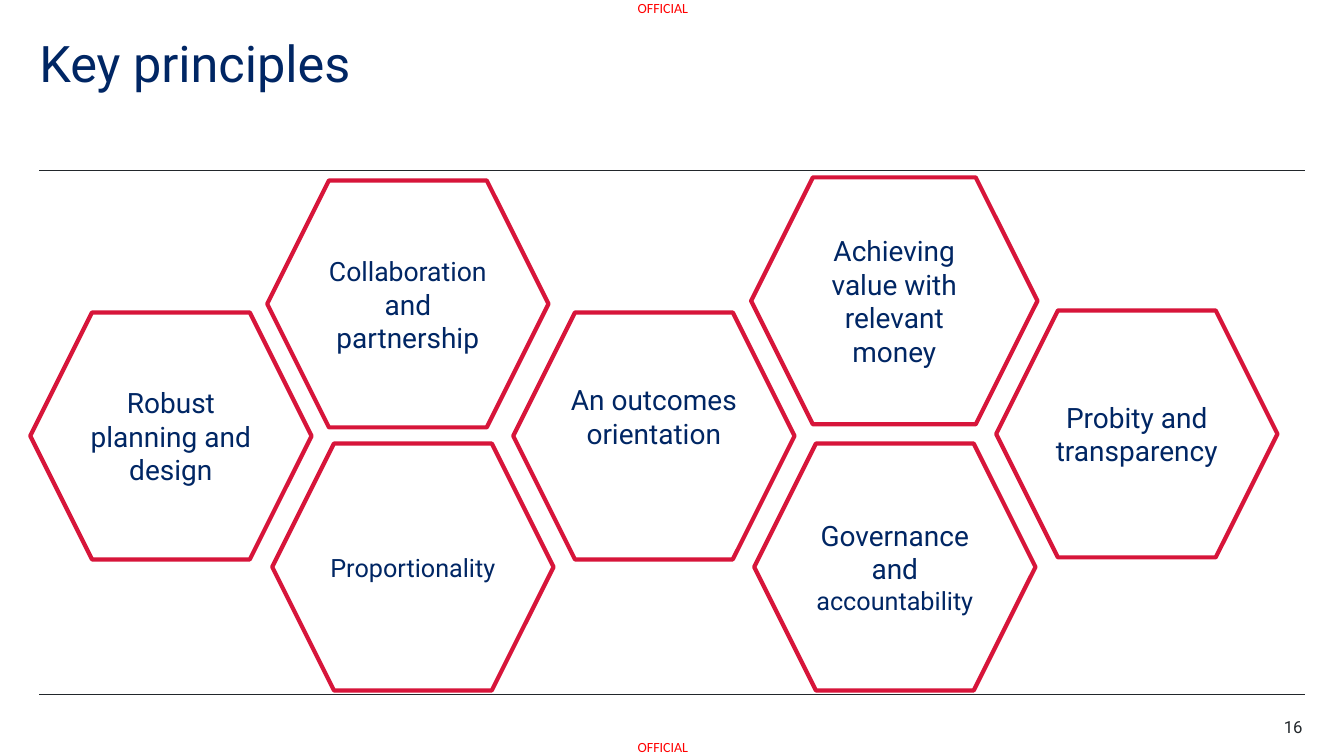
import dataclasses

import pptx
import pptx.dml.color
import pptx.enum.shapes
import pptx.enum.text
import pptx.oxml.ns
import pptx.util
from lxml import etree

EMU_PER_PX = 9144  # 100 px to the inch
ALIGN = pptx.enum.text.PP_ALIGN
ANCHOR = pptx.enum.text.MSO_ANCHOR


@dataclasses.dataclass(frozen=True)
class Theme:
    navy: str = "002664"
    red: str = "D7153A"
    ink: str = "22272B"
    marking: str = "FF0000"
    white: str = "FFFFFF"
    font: str = "Roboto"
    marking_font: str = "Calibri"
    title_size: int = 36
    label_size: int = 20
    number_size: int = 12
    marking_size: int = 10
    outline: float = 3
    rule: float = 0.5


@dataclasses.dataclass(frozen=True)
class Span:
    text: str
    size: int = 20


@dataclasses.dataclass(frozen=True)
class Principle:
    left: int
    top: int
    spans: tuple[Span, ...]
    width: int = 279
    height: int = 245
    bottom_inset: int = 5


THEME = Theme()
PRINCIPLES = (
    Principle(270, 440, (Span("Proportionality", 18),)),
    Principle(30, 310, (Span("Robust planning and design"),)),
    Principle(509, 310, (Span("An outcomes orientation"),), bottom_inset=44),
    Principle(745, 176, (Span("Achieving value with relevant money"),), width=284),
    Principle(988, 308, (Span("Probity and transparency"),)),
    Principle(265, 179, (Span("Collaboration", 19), Span(" and partnership"))),
    Principle(748, 440, (Span("Governance and "), Span("accountability", 18))),
)


def px(length: int) -> int:
    return pptx.util.Emu(length * EMU_PER_PX)


def rgb(colour: str) -> pptx.dml.color.RGBColor:
    return pptx.dml.color.RGBColor.from_string(colour)


def set_font(font, size: int, colour: str, name: str = THEME.font) -> None:
    font.name = name
    font.size = pptx.util.Pt(size)
    font.color.rgb = rgb(colour)


def set_insets(frame, inset: int) -> None:
    frame.margin_left = frame.margin_right = px(inset)
    frame.margin_top = frame.margin_bottom = px(inset)


def add_label(page, left: int, top: int, width: int, height: int, text: str,
              align, size: int, colour: str, name: str):
    box = page.shapes.add_textbox(px(left), px(top), px(width), px(height))
    set_insets(box.text_frame, 0)
    para = box.text_frame.paragraphs[0]
    para.text = text
    para.alignment = align
    set_font(para.font, size, colour, name)
    return box


def add_rule(page, top: int) -> None:
    rule = page.shapes.add_connector(
        pptx.enum.shapes.MSO_CONNECTOR.STRAIGHT, px(39), px(top), px(1294), px(top))
    rule.line.color.rgb = rgb(THEME.ink)
    rule.line.width = pptx.util.Pt(THEME.rule)
    etree.SubElement(rule._element.spPr, pptx.oxml.ns.qn("a:effectLst"))


def add_title(page, text: str) -> None:
    title = page.shapes.title
    title.left, title.top, title.width, title.height = px(39), px(39), px(1063), px(110)
    frame = title.text_frame
    set_insets(frame, 0)
    frame.auto_size = pptx.enum.text.MSO_AUTO_SIZE.NONE
    frame.vertical_anchor = ANCHOR.TOP
    para = frame.paragraphs[0]
    para.text = text
    para.alignment = ALIGN.LEFT
    para.line_spacing = 0.9
    set_font(para.font, THEME.title_size, THEME.navy)


def add_principle(page, principle: Principle) -> None:
    hexagon = page.shapes.add_shape(
        pptx.enum.shapes.MSO_SHAPE.HEXAGON, px(principle.left), px(principle.top),
        px(principle.width), px(principle.height))
    hexagon.shadow.inherit = False
    hexagon.fill.solid()
    hexagon.fill.fore_color.rgb = rgb(THEME.white)
    hexagon.line.color.rgb = rgb(THEME.red)
    hexagon.line.width = pptx.util.Pt(THEME.outline)
    frame = hexagon.text_frame
    frame.word_wrap = True
    frame.vertical_anchor = ANCHOR.MIDDLE
    frame.margin_bottom = px(principle.bottom_inset)
    para = frame.paragraphs[0]
    para.alignment = ALIGN.CENTER
    set_font(para.font, THEME.label_size, THEME.navy)
    for span in principle.spans:
        run = para.add_run()
        run.text = span.text
        if span.size != THEME.label_size:
            run.font.size = pptx.util.Pt(span.size)


def main() -> None:
    deck = pptx.Presentation()
    deck.slide_width, deck.slide_height = px(1333), px(750)
    page = deck.slides.add_slide(deck.slide_layouts.get_by_name("Title Only"))

    # Security markings and rules
    for top in (0, 733):
        add_label(page, 631, top, 53, 17, "OFFICIAL", ALIGN.CENTER,
                  THEME.marking_size, THEME.marking, THEME.marking_font)
    for top in (169, 689):
        add_rule(page, top)

    # Title and page number
    add_title(page, "Key principles")
    number = add_label(page, 1238, 713, 54, 20, "16", ALIGN.RIGHT,
                       THEME.number_size, THEME.ink, THEME.font)
    number.text_frame.word_wrap = True
    number.text_frame.paragraphs[0].line_spacing = 0.9

    # Honeycomb of principles
    for principle in PRINCIPLES:
        add_principle(page, principle)

    deck.save("out.pptx")


if __name__ == "__main__":
    main()
